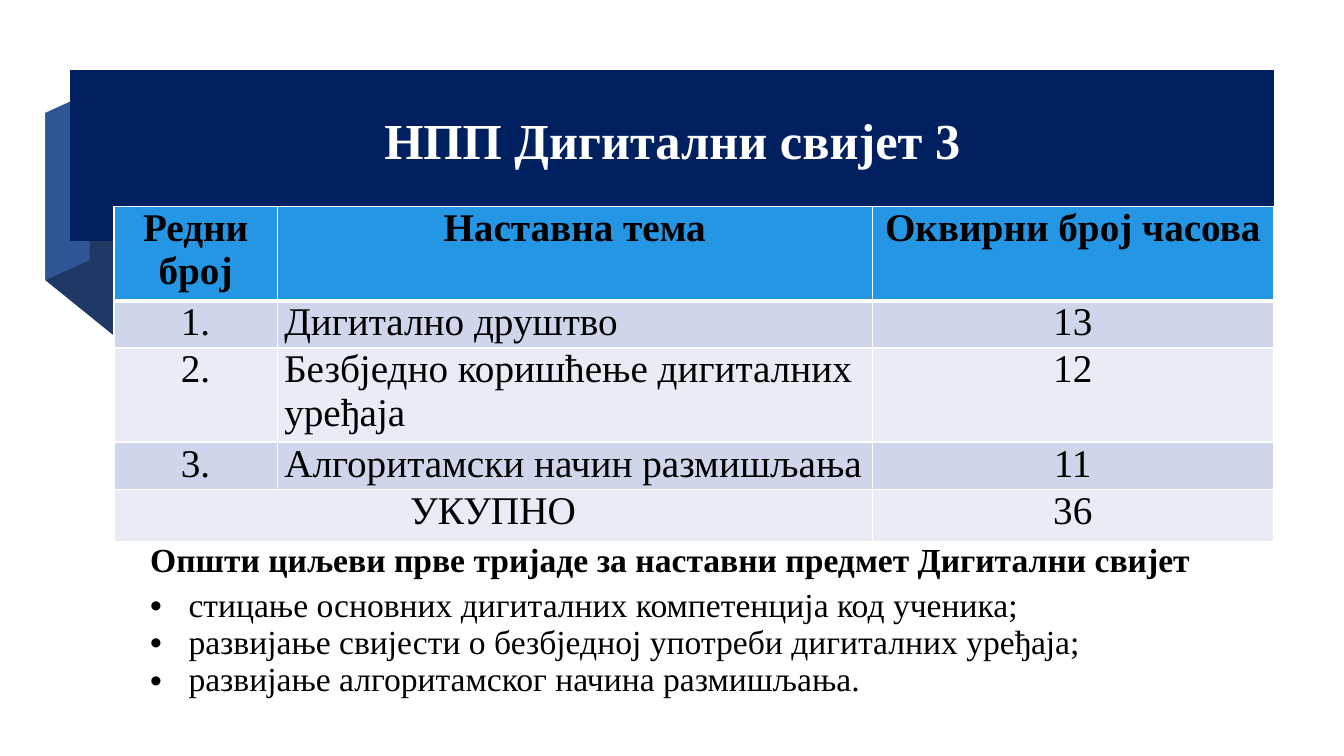
from lxml import etree
from pptx import Presentation
from pptx.dml.color import RGBColor
from pptx.enum.shapes import MSO_SHAPE
from pptx.enum.text import MSO_ANCHOR, PP_ALIGN
from pptx.oxml.ns import qn
from pptx.util import Inches, Pt

RECTANGLE = MSO_SHAPE.RECTANGLE
MIDDLE = MSO_ANCHOR.MIDDLE
LEFT, CENTER, JUSTIFY = PP_ALIGN.LEFT, PP_ALIGN.CENTER, PP_ALIGN.JUSTIFY

FONT = "Times New Roman"
COLORS = {
    "navy": "002060",
    "fold_dark": "203864",
    "fold_light": "2F5597",
    "header": "2596E3",
    "band_odd": "CFD5EA",
    "band_even": "E9EBF5",
    "white": "FFFFFF",
    "black": "000000",
}

TITLE = "НПП Дигитални свијет 3"
HEADINGS = ("Редни број", "Наставна тема", "Оквирни број часова")
TOPICS = (
    ("1.", "Дигитално друштво", "13"),
    ("2.", "Безбједно коришћење дигиталних уређаја", "12"),
    ("3.", "Алгоритамски начин размишљања", "11"),
    ("УКУПНО", "", "36"),
)
GOALS_HEADING = "Општи циљеви прве тријаде за наставни предмет Дигитални свијет"
GOALS = (
    "стицање основних дигиталних компетенција код ученика;",
    "развијање свијести о безбједној употреби дигиталних уређаја;",
    "развијање алгоритамског начина размишљања.",
)


def rgb(name):
    return RGBColor.from_string(COLORS[name])


def write(frame, *lines, size, color="black", bold=False, align=LEFT,
          spacing=None, bullet=False):
    frame.word_wrap = True
    for index, line in enumerate(lines):
        paragraph = frame.add_paragraph() if index else frame.paragraphs[0]
        paragraph.alignment = align
        if spacing:
            paragraph.line_spacing = spacing
        if bullet:
            properties = paragraph._p.get_or_add_pPr()
            properties.set("marL", str(Inches(0.38)))
            properties.set("indent", str(-Inches(0.38)))
            etree.SubElement(properties, qn("a:buFont"), typeface="Arial")
            etree.SubElement(properties, qn("a:buChar"), char="•")
        run = paragraph.add_run()
        run.text = line
        run.font.name = FONT
        run.font.size = Pt(size)
        run.font.bold = bold
        run.font.color.rgb = rgb(color)


def style_cell(cell, fill=None, bottom=1):
    cell.margin_left = cell.margin_right = Inches(0.07)
    cell.margin_top = cell.margin_bottom = 0
    if fill:
        cell.fill.solid()
        cell.fill.fore_color.rgb = rgb(fill)
    else:
        cell.fill.background()
    properties = cell._tc.get_or_add_tcPr()
    widths = {"lnL": 1, "lnR": 1, "lnT": 1, "lnB": bottom}
    for index, (side, width) in enumerate(widths.items()):
        border = etree.Element(qn(f"a:{side}"), w=str(Pt(width)))
        solid = etree.SubElement(border, qn("a:solidFill"))
        etree.SubElement(solid, qn("a:srgbClr"), val=COLORS["white"])
        properties.insert(index, border)


def add_grid(slide, left, top, widths, heights):
    table = slide.shapes.add_table(
        len(heights), len(widths), Inches(left), Inches(top),
        Inches(sum(widths)), Inches(sum(heights))).table
    table.first_row = table.horz_banding = False
    for column, width in zip(table.columns, widths):
        column.width = Inches(width)
    for row, height in zip(table.rows, heights):
        row.height = Inches(height)
    return table


def add_goals(slide, left, top, width):
    goals = add_grid(slide, left, top, [width], [0.45, 1.2])
    heading, listing = goals.cell(0, 0), goals.cell(1, 0)
    style_cell(heading, bottom=3)
    style_cell(listing)
    write(heading.text_frame, GOALS_HEADING, size=24, bold=True, align=JUSTIFY)
    write(listing.text_frame, *GOALS, size=24, align=JUSTIFY, bullet=True)


def add_fold(slide, left, top, width, drop, height, color):
    corners = [(left, top), (left + width, top + drop),
               (left + width, top + drop + height), (left, top + height)]
    points = [(Inches(x), Inches(y)) for x, y in corners]
    builder = slide.shapes.build_freeform(*points[0])
    builder.add_line_segments(points[1:], close=True)
    fold = builder.convert_to_shape()
    fold.shadow.inherit = False
    fold.fill.solid()
    fold.fill.fore_color.rgb = rgb(color)
    fold.line.fill.background()


def add_banner(slide, left, top, width, height):
    fold_left, fold_top = left - 0.25, top + 0.42
    add_fold(slide, fold_left, fold_top, 0.78, 0.63, 1.66, "fold_dark")
    add_fold(slide, fold_left, fold_top, 0.44, -0.2, 1.66, "fold_light")
    banner = slide.shapes.add_shape(
        RECTANGLE, Inches(left), Inches(top), Inches(width), Inches(height))
    banner.shadow.inherit = False
    banner.fill.solid()
    banner.fill.fore_color.rgb = rgb("navy")
    banner.line.color.rgb = rgb("navy")
    banner.line.width = Pt(0.75)
    title = slide.shapes.add_textbox(
        Inches(left + 0.22), Inches(top), Inches(11.5), Inches(1.45))
    title.text_frame.vertical_anchor = MIDDLE
    write(title.text_frame, TITLE, size=36, color="white", bold=True,
          align=CENTER, spacing=0.9)


def add_topics(slide, left, top):
    line = 0.43
    topics = add_grid(slide, left, top, [1.62, 5.9, 3.98],
                      [2 * line, line, 2 * line, line, 0.52])
    last = len(TOPICS)
    for r, values in enumerate((HEADINGS, *TOPICS)):
        header = r == 0
        fill = "header" if header else "band_odd" if r % 2 else "band_even"
        for c, value in enumerate(values):
            cell = topics.cell(r, c)
            style_cell(cell, fill, bottom=3 if header else 1)
            if value:
                align = LEFT if c == 1 and not header else CENTER
                write(cell.text_frame, value, size=28, bold=header, align=align)
    topics.cell(last, 0).merge(topics.cell(last, 1))


def main():
    presentation = Presentation()
    presentation.slide_width = Inches(13.33)
    presentation.slide_height = Inches(7.5)
    slide = presentation.slides.add_slide(presentation.slide_layouts[6])
    add_goals(slide, 1.42, 5.38, 11)
    add_banner(slide, 0.7, 0.7, 11.93, 1.69)
    add_topics(slide, 1.13, 2.05)
    presentation.save("out.pptx")


if __name__ == "__main__":
    main()
